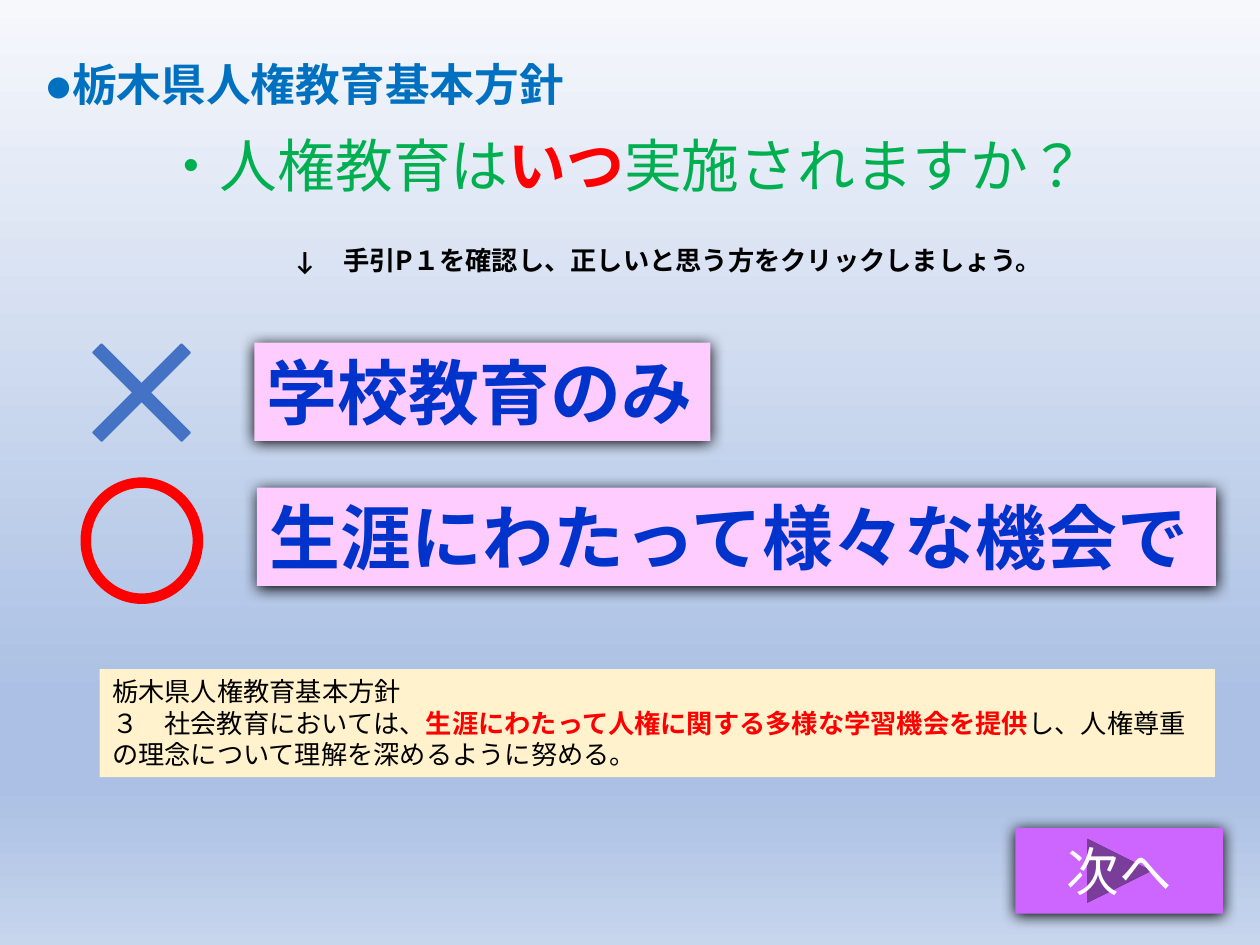
from lxml import etree
from pptx import Presentation
from pptx.dml.color import RGBColor
from pptx.enum.lang import MSO_LANGUAGE_ID
from pptx.enum.shapes import MSO_SHAPE
from pptx.enum.text import MSO_ANCHOR, PP_ALIGN
from pptx.oxml.ns import qn
from pptx.util import Cm, Pt

RECT, OVAL = MSO_SHAPE.RECTANGLE, MSO_SHAPE.OVAL
NEXT, CROSS = MSO_SHAPE.ACTION_BUTTON_FORWARD_OR_NEXT, MSO_SHAPE.MATH_MULTIPLY
TOP, MIDDLE = MSO_ANCHOR.TOP, MSO_ANCHOR.MIDDLE
LEFT, CENTER = PP_ALIGN.LEFT, PP_ALIGN.CENTER
JAPANESE = MSO_LANGUAGE_ID.JAPANESE
JP, LATIN = "Noto Sans CJK JP", "Calibri"
COLORS = {
    "heading": "0070C0", "question": "00B050", "red": "FF0000",
    "black": "000000", "white": "FFFFFF", "answer": "0033CC",
    "pink": "FFCCFF", "cream": "FFF2CC", "purple": "CC66FF", "blue": "4472C4",
}
BACKGROUND = [(0, "F6F8FC"), (74, "ABC0E4"), (83, "ABC0E4"), (100, "C7D5ED")]


def rgb(name):
    return RGBColor.from_string(COLORS[name])


def write(sp, paragraphs, size, font=JP, anchor=TOP, align=LEFT):
    """Fill a shape with paragraphs, each a list of (text, colour, bold)."""
    tf = sp.text_frame
    tf.word_wrap = True
    tf.vertical_anchor = anchor
    for i, runs in enumerate(paragraphs):
        p = tf.add_paragraph() if i else tf.paragraphs[0]
        p.alignment = align
        for text, color, bold in runs:
            r = p.add_run()
            r.text = text
            r.font.size, r.font.bold, r.font.name = Pt(size), bold, font
            r.font.color.rgb = rgb(color)
            r.font.language_id = JAPANESE
            # East Asian face with compact line height
            etree.SubElement(r._r.get_or_add_rPr(), qn("a:ea"), typeface=LATIN)


prs = Presentation()
prs.slide_width, prs.slide_height = Cm(25.4), Cm(19.05)
s = prs.slides.add_slide(prs.slide_layouts[6])

fill = s.background.fill
fill.gradient()
fill.gradient_angle = 270
stops = s.background._cSld.find(".//" + qn("a:gsLst"))
for old in list(stops):
    stops.remove(old)
for pos, color in BACKGROUND:
    gs = etree.SubElement(stops, qn("a:gs"), pos=str(pos * 1000))
    etree.SubElement(gs, qn("a:srgbClr"), val=color)

# Heading, question and hint
captions = [
    (0.66, 1.02, 12.6, 1.17, 25.5, [("●栃木県人権教育基本方針", "heading", True)]),
    (3.02, 2.49, 19.33, 1.68, 33, [("・人権教育は", "question", False),
                                   ("いつ", "red", True),
                                   ("実施されますか？", "question", False)]),
    (5.66, 4.8, 15.85, 0.89, 15,
     [("↓　手引P１を確認し、正しいと思う方をクリックしましょう。", "black", True)]),
]
for x, y, w, h, size, runs in captions:
    write(s.shapes.add_textbox(Cm(x), Cm(y), Cm(w), Cm(h)), [runs], size)

# Answers, marks, note and button: preset, place, fill, line (colour, width), shadow
shapes = {
    "wrong": (RECT, 5.13, 6.91, 9.19, 1.98, "pink", None, True),
    "right": (RECT, 5.18, 9.83, 19.33, 1.98, "pink", None, True),
    "circle": (OVAL, 1.73, 9.73, 2.26, 2.34, None, ("red", 6), False),
    "next": (NEXT, 20.47, 16.69, 4.19, 1.73, "purple", None, True),
    "note": (RECT, 2.01, 13.49, 22.48, 2.18, "cream", None, False),
    "cross": (CROSS, 1.14, 6.2, 3.43, 3.43, "blue", ("blue", 1), False),
}
made = {}
for name, (preset, x, y, w, h, color, line, shadow) in shapes.items():
    sp = made[name] = s.shapes.add_shape(preset, Cm(x), Cm(y), Cm(w), Cm(h))
    if color:
        sp.fill.solid()
        sp.fill.fore_color.rgb = rgb(color)
    else:
        sp.fill.background()
    if line:
        sp.line.color.rgb, sp.line.width = rgb(line[0]), Pt(line[1])
    else:
        sp.line.fill.background()
    sp.shadow.inherit = False
    if shadow:
        effects = sp._element.spPr.find(qn("a:effectLst"))
        outer = etree.SubElement(effects, qn("a:outerShdw"), blurRad=str(Pt(8.5)),
                                 dist=str(Pt(1)), dir="5400000", rotWithShape="0")
        etree.SubElement(outer, qn("a:srgbClr"), val=COLORS["black"])
made["cross"].adjustments[0] = 0.07

write(made["wrong"], [[("学校教育のみ", "answer", True)]], 40.5)
write(made["right"], [[("生涯にわたって様々な機会で", "answer", True)]], 40.5)
write(made["next"], [[("次へ", "white", False)]], 30, anchor=MIDDLE, align=CENTER)
write(made["note"], [
    [("栃木県人権教育基本方針", "black", False)],
    [("３　社会教育においては、", "black", False),
     ("生涯にわたって人権に関する多様な学習機会を提供", "red", True),
     ("し、人権尊重の理念について理解を深めるように努める。", "black", False)],
], 15, font=LATIN)

prs.save("out.pptx")
